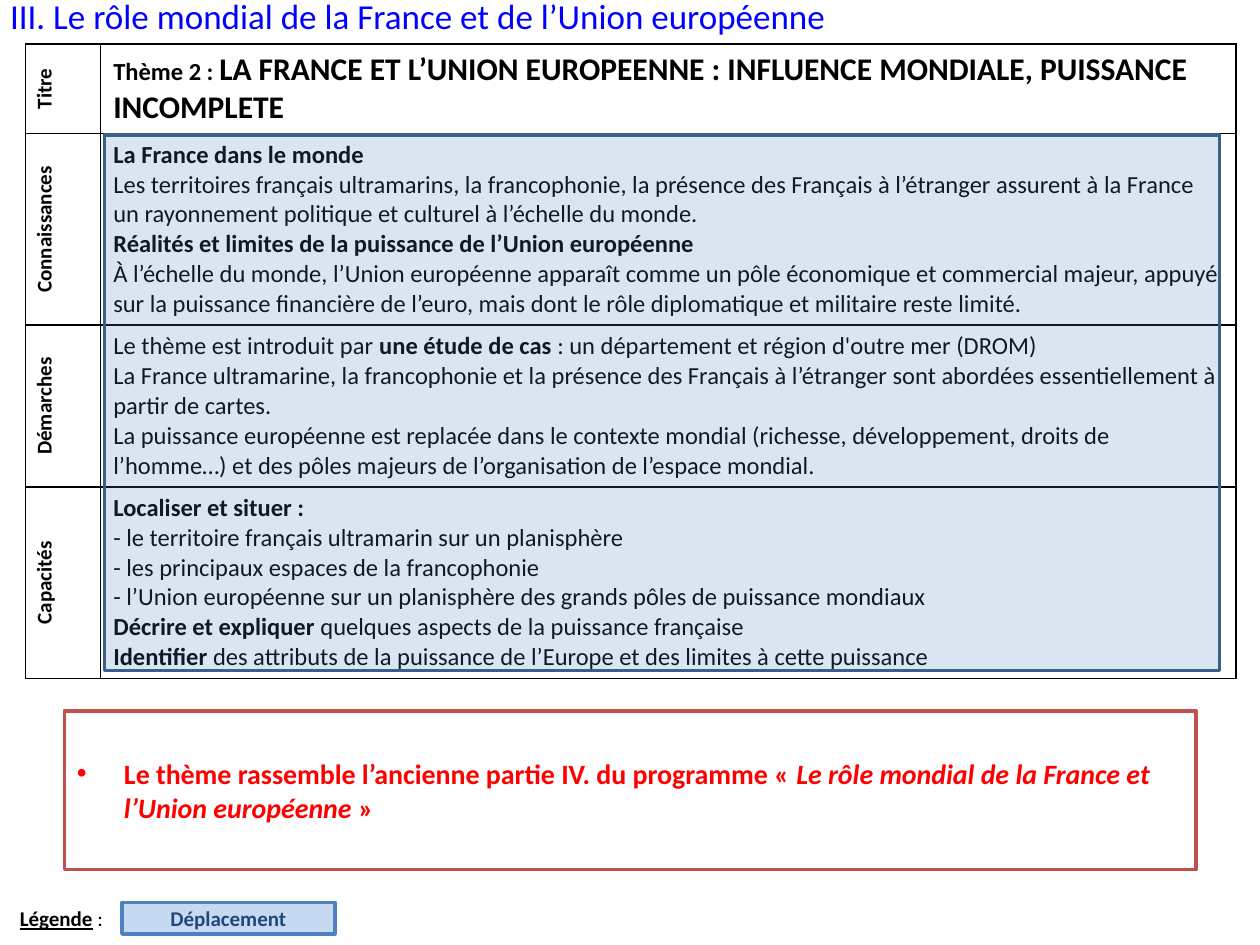
from dataclasses import dataclass

import pptx
import pptx.dml.color
import pptx.enum.shapes
import pptx.enum.text
import pptx.oxml
import pptx.oxml.ns
import pptx.util

Cm = pptx.util.Cm
Pt = pptx.util.Pt
RGB = pptx.dml.color.RGBColor
Align = pptx.enum.text.PP_ALIGN
Anchor = pptx.enum.text.MSO_ANCHOR

BLACK = RGB(0, 0, 0)
WHITE = RGB(255, 255, 255)
BLUE = RGB(0, 0, 255)
RED = RGB(255, 0, 0)
BRICK = RGB(0xC0, 0x50, 0x4D)
STEEL = RGB(0x4F, 0x81, 0xBD)
SLATE = RGB(0x3A, 0x5F, 0x8C)
NAVY = RGB(0x1F, 0x49, 0x7D)
PALE = RGB(0xC6, 0xD9, 0xF1)


@dataclass
class Bit:
    text: str
    size: int = 14
    bold: bool = False
    italic: bool = False
    under: bool = False


@dataclass
class Row:
    label: str
    height: float
    lines: list[list[Bit]]


@dataclass
class Box:
    left: float
    top: float
    width: float
    height: float
    fill: RGB
    line: RGB


def bold(text: str, size: int = 14) -> Bit:
    return Bit(text, size, True)


def write(frame, lines: list[list[Bit]], color: RGB, align=Align.LEFT) -> None:
    for i, line in enumerate(lines):
        para = frame.paragraphs[0] if i == 0 else frame.add_paragraph()
        para.alignment = align
        for bit in line:
            run = para.add_run()
            run.text = bit.text
            font = run.font
            font.name, font.size = "Calibri", Pt(bit.size)
            font.bold, font.italic = bit.bold, bit.italic
            font.underline = bit.under
            font.color.rgb = color


def frame_cell(cell) -> None:
    props = cell._tc.get_or_add_tcPr()
    ns = pptx.oxml.ns.nsdecls("a")
    for side in "LRTB":
        props.append(pptx.oxml.parse_xml(
            f'<a:ln{side} {ns} w="12700"><a:solidFill>'
            f'<a:srgbClr val="{BLACK}"/></a:solidFill></a:ln{side}>'))
    cell.fill.background()


def draw_box(slide, box: Box):
    shape = slide.shapes.add_shape(
        pptx.enum.shapes.MSO_SHAPE.RECTANGLE,
        Cm(box.left), Cm(box.top), Cm(box.width), Cm(box.height))
    shape.shadow.inherit = False
    shape.fill.solid()
    shape.fill.fore_color.rgb = box.fill
    shape.line.color.rgb = box.line
    shape.line.width = Pt(2)
    shape.text_frame.word_wrap = True
    shape.text_frame.vertical_anchor = Anchor.MIDDLE
    return shape


def draw_table(slide, rows: list[Row]) -> None:
    table = slide.shapes.add_table(
        len(rows), 2, Cm(0.51), Cm(0.89), Cm(24.41), Cm(9.88)).table
    table.first_row = table.horz_banding = False
    table.columns[0].width, table.columns[1].width = Cm(1.52), Cm(22.89)
    for i, row in enumerate(rows):
        table.rows[i].height = Cm(row.height)
        head, body = table.cell(i, 0), table.cell(i, 1)
        write(head.text_frame, [[bold(row.label, 12)]], BLACK, Align.CENTER)
        write(body.text_frame, row.lines, BLACK)
        frame_cell(head)
        frame_cell(body)
        head.vertical_anchor = Anchor.MIDDLE
        head._tc.get_or_add_tcPr().set("vert", "vert270")


ROWS = [
    Row("Titre", 1.19, [[
        bold("Thème 2 : "),
        bold("LA FRANCE ET L’UNION EUROPEENNE : INFLUENCE MONDIALE, "
             "PUISSANCE INCOMPLETE", 18)]]),
    Row("Connaissances", 3.05, [
        [bold("La France dans le monde")],
        [Bit("Les territoires français ultramarins, la francophonie, la "
             "présence des Français à l’étranger assurent à la France un "
             "rayonnement politique et culturel à l’échelle du monde.")],
        [bold("Réalités et limites de la puissance de l’Union européenne")],
        [Bit("À l’échelle du monde, l’Union européenne apparaît comme un "
             "pôle économique et commercial majeur, appuyé sur la puissance "
             "financière de l’euro, mais dont le rôle diplomatique et "
             "militaire reste limité.")]]),
    Row("Démarches", 2.82, [
        [Bit("Le thème est introduit par "), bold("une étude de cas "),
         Bit(": un département et région d'outre mer (DROM)")],
        [Bit("La France ultramarine, la francophonie et la présence des "
             "Français à l’étranger sont abordées essentiellement à partir "
             "de cartes.")],
        [Bit("La puissance européenne est replacée dans le contexte mondial "
             "(richesse, développement, droits de l’homme…) et des pôles "
             "majeurs de l’organisation de l’espace mondial.")]]),
    Row("Capacités", 2.82, [
        [bold("Localiser et situer :")],
        [Bit("- le territoire français ultramarin sur un planisphère")],
        [Bit("- les principaux espaces de la francophonie")],
        [Bit("- l’Union européenne sur un planisphère des grands pôles de "
             "puissance mondiaux")],
        [bold("Décrire et expliquer "),
         Bit("quelques aspects de la puissance française")],
        [bold("Identifier "),
         Bit("des attributs de la puissance de l’Europe et des limites à "
             "cette puissance")]]),
]


def main() -> None:
    deck = pptx.Presentation()
    deck.slide_width, deck.slide_height = Cm(25.4), Cm(19.05)
    slide = deck.slides.add_slide(deck.slide_layouts[5])

    # Title
    title = slide.shapes.title
    title.left, title.top = Cm(-0.05), Cm(-0.08)
    title.width, title.height = Cm(25.45), Cm(0.79)
    title.text_frame.auto_size = pptx.enum.text.MSO_AUTO_SIZE.NONE
    title.text_frame.vertical_anchor = Anchor.MIDDLE
    write(title.text_frame, [[Bit(
        "III. Le rôle mondial de la France et de l’Union européenne", 20)]],
        BLUE)

    # Programme table
    draw_table(slide, ROWS)

    # Remark with a bullet
    note = draw_box(slide, Box(1.3, 14.33, 22.81, 3.2, WHITE, BRICK))
    write(note.text_frame, [[
        bold("Le thème rassemble l’ancienne partie IV. du programme « ", 16),
        Bit("Le rôle mondial de la France et l’Union européenne ", 16, True,
            True),
        bold("»", 16)]], RED)
    props = note.text_frame.paragraphs[0]._p.get_or_add_pPr()
    props.set("marL", str(Cm(0.95)))
    props.set("indent", str(Cm(-0.95)))
    ns = pptx.oxml.ns.nsdecls("a")
    props.append(pptx.oxml.parse_xml(f'<a:buFont {ns} typeface="Arial"/>'))
    props.append(pptx.oxml.parse_xml(f'<a:buChar {ns} char="•"/>'))

    # Legend
    key = draw_box(slide, Box(2.46, 18.19, 4.29, 0.64, PALE, STEEL))
    write(key.text_frame, [[bold("Déplacement", 12)]], NAVY, Align.CENTER)
    label = slide.shapes.add_textbox(Cm(0.15), Cm(18.14), Cm(2.31), Cm(0.76))
    label.text_frame.word_wrap = False
    label.text_frame.auto_size = pptx.enum.text.MSO_AUTO_SIZE.SHAPE_TO_FIT_TEXT
    write(label.text_frame,
          [[Bit("Légende", 12, True, under=True), Bit(" :", 12)]], BLACK)

    # Translucent veil over the moved parts
    veil = draw_box(slide, Box(2.11, 2.72, 22.48, 10.8, STEEL, SLATE))
    tint = veil.fill._xPr.find(".//" + pptx.oxml.ns.qn("a:srgbClr"))
    tint.append(pptx.oxml.parse_xml(f'<a:alpha {ns} val="20000"/>'))

    deck.save("out.pptx")


if __name__ == "__main__":
    main()
